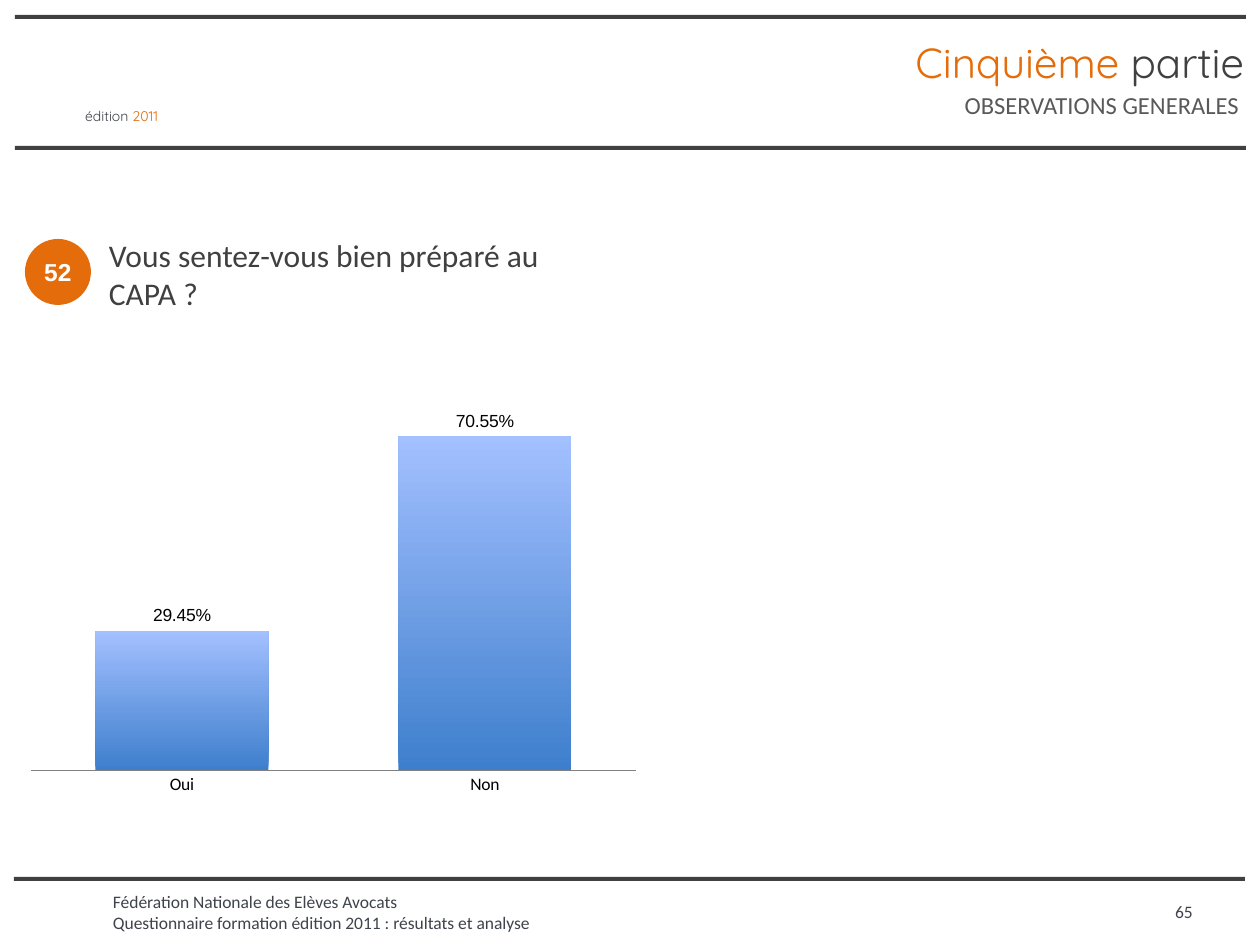
from lxml import etree
from pptx import Presentation
from pptx.chart.data import CategoryChartData
from pptx.dml.color import RGBColor
from pptx.enum.chart import XL_CHART_TYPE, XL_LABEL_POSITION, XL_TICK_MARK
from pptx.enum.shapes import MSO_SHAPE
from pptx.enum.text import MSO_ANCHOR, MSO_AUTO_SIZE, PP_ALIGN
from pptx.oxml.ns import qn
from pptx.util import Pt

PX = 914400 / 126
COLUMN = XL_CHART_TYPE.COLUMN_CLUSTERED
OUTSIDE, NO_TICK = XL_LABEL_POSITION.OUTSIDE_END, XL_TICK_MARK.NONE
RECT, OVAL = MSO_SHAPE.RECTANGLE, MSO_SHAPE.OVAL
TOP, MIDDLE = MSO_ANCHOR.TOP, MSO_ANCHOR.MIDDLE
LEFT, CENTER, RIGHT = PP_ALIGN.LEFT, PP_ALIGN.CENTER, PP_ALIGN.RIGHT
C = {name: RGBColor.from_string(h) for name, h in {
    "dark": "404040", "slate": "3F434B", "grey": "595959", "orange": "E46C0A",
    "white": "FFFFFF", "black": "000000", "axis": "808080",
    "bar_top": "A3C0FF", "bar_bottom": "3E7FCD"}.items()}


def px(*values):
    return [round(v * PX) for v in values]


def write(sp, *lines, size, font="Calibri", align=LEFT, anchor=TOP,
          wrap=True, bold=False, inset=(12, 6)):
    """Fill a shape with lines, each a list of (text, colour name) runs."""
    tf = sp.text_frame
    tf.word_wrap, tf.auto_size, tf.vertical_anchor = wrap, MSO_AUTO_SIZE.NONE, anchor
    tf.margin_left, tf.margin_top = tf.margin_right, tf.margin_bottom = px(*inset)
    for i, line in enumerate(lines):
        p = tf.add_paragraph() if i else tf.paragraphs[0]
        p.alignment = align
        for text, color in line:
            r = p.add_run()
            r.text = text
            r.font.size, r.font.name, r.font.bold = Pt(size), font, bold
            r.font.color.rgb = C[color]


prs = Presentation()
prs.slide_width, prs.slide_height = px(1260, 945)
s = prs.slides.add_slide(prs.slide_layouts[5])

# Header and footer
title = s.shapes.title
title.left, title.top, title.width, title.height = px(251, 30, 1005, 63)
write(title, [("Cinquième ", "orange"), ("partie", "dark")],
      size=24, font="Quicksand", align=RIGHT)

for left, top in ((15, 15), (15, 146), (14, 877)):
    rule = s.shapes.add_shape(RECT, *px(left, top, 1231, 4))
    rule.shadow.inherit = False
    rule.fill.solid()
    rule.fill.fore_color.rgb = C["dark"]
    rule.line.fill.background()

write(s.shapes.add_textbox(*px(949, 84, 302, 43)),
      [("OBSERVATIONS GENERALES", "grey")], size=14, align=RIGHT, wrap=False)
write(s.shapes.add_textbox(*px(73, 102, 108, 30)),
      [("édition ", "slate"), ("2011", "orange")],
      size=8, font="Quicksand", wrap=False)
write(s.shapes.add_textbox(*px(101, 885, 816, 55)),
      [("Fédération Nationale des Elèves Avocats", "slate")],
      [("Questionnaire formation édition 2011 : résultats et analyse", "slate")],
      size=10)
write(s.shapes.add_textbox(*px(1163, 895, 81, 34)), [("65", "slate")], size=10)

# Question
badge = s.shapes.add_shape(OVAL, *px(25, 239, 66, 66))
badge.shadow.inherit = False
badge.fill.solid()
badge.fill.fore_color.rgb = C["orange"]
badge.line.fill.background()
write(badge, [("52", "white")], size=14, font="Arial", bold=True,
      align=CENTER, anchor=MIDDLE, inset=(5, 6))
write(s.shapes.add_textbox(*px(97, 230, 513, 89)),
      [("Vous sentez-vous bien préparé au CAPA ?", "dark")], size=18)

# Answers
data = CategoryChartData(number_format="0.00%")
data.categories = ["Oui", "Non"]
data.add_series("Series 1", (0.2945, 0.7055))
chart = s.shapes.add_chart(COLUMN, *px(18, 383, 631, 421), data).chart
chart.has_legend = chart.has_title = False
chart.font.size, chart.font.name = Pt(10), "Arial"
chart.font.color.rgb = C["black"]

value_axis, category_axis = chart.value_axis, chart.category_axis
value_axis.visible = value_axis.has_major_gridlines = False
value_axis.minimum_scale, value_axis.maximum_scale = 0, 0.8
category_axis.major_tick_mark = NO_TICK
category_axis.tick_labels.font.name = "Calibri"
category_axis.tick_labels.font.size = Pt(10)
category_axis.format.line.color.rgb = C["axis"]

plot = chart.plots[0]
plot.gap_width, plot.vary_by_categories = 75, False
plot.has_data_labels = True
labels = plot.data_labels
labels.show_value, labels.position = True, OUTSIDE
labels.number_format, labels.number_format_is_linked = "0.00%", False

fill = plot.series[0].format.fill
fill.gradient()
fill.gradient_angle = 90
for stop, color in zip(fill.gradient_stops, ("bar_bottom", "bar_top")):
    stop.color.rgb = C[color]

# Fixed inner plot area, as fractions of the chart
area = chart.plots[0]._element.getparent()
for old in area.findall(qn("c:layout")):
    area.remove(old)
layout = etree.Element(qn("c:layout"))
area.insert(0, layout)
manual = etree.SubElement(layout, qn("c:manualLayout"))
for tag, value in (("layoutTarget", "inner"), ("xMode", "edge"), ("yMode", "edge"),
                   ("x", 0.02), ("y", 0.02), ("w", 0.96), ("h", 0.9)):
    etree.SubElement(manual, qn(f"c:{tag}")).set("val", str(value))

prs.save("out.pptx")
